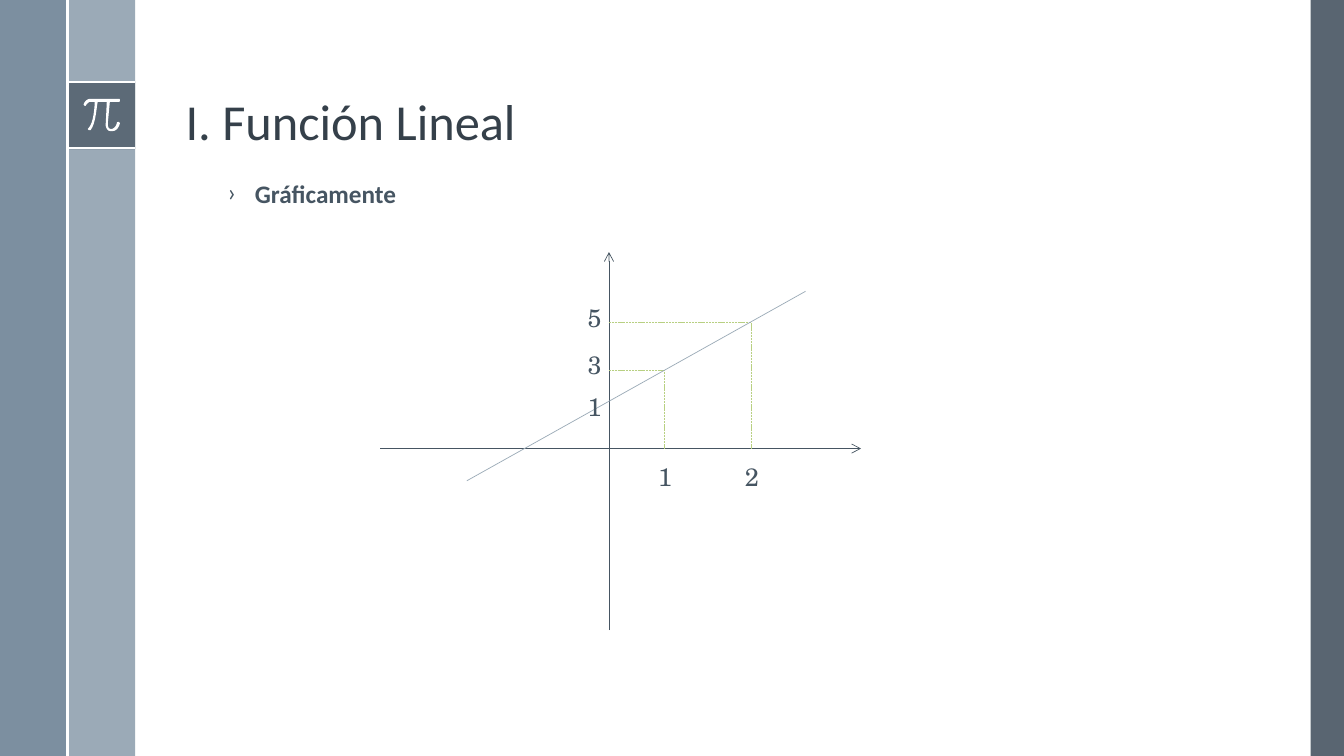
from lxml import etree
from pptx import Presentation
from pptx.dml.color import RGBColor
from pptx.enum import dml, shapes, text
from pptx.oxml.ns import qn
from pptx.util import Inches, Pt

# Content
TITLE = "I. Función Lineal"
SUBTITLE = "Gráficamente"
ORIGIN = (6.04, 4.45)
AXES = [((6.04, 6.25), (6.04, 2.5)), ((3.77, 4.45), (8.54, 4.45))]
FUNCTION_LINE = ((7.99, 2.89), (4.63, 4.77))
MARKED_POINTS = [(6.59, 3.67), (7.45, 3.2)]
AXIS_LABELS = [  # text, left, top, width
    ("1", 6.43, 4.53, 0.39), ("2", 7.29, 4.53, 0.47),
    ("3", 5.73, 3.42, 0.23), ("5", 5.73, 2.95, 0.23), ("1", 5.73, 3.83, 0.39),
]
BANDS = [  # left, top, width, height, colour, opacity %
    (13, 0, 0.33, 7.5, "dark", 90), (0.67, 0, 0.67, 7.5, "light", 100),
    (0, 0, 0.67, 7.5, "mid", 88), (0.67, 0.81, 0.67, 0.67, "dark", 75),
]
BAND_RULES = [((0.67, 0.81), (1.34, 0.81)), ((0.67, 1.47), (1.34, 1.47)),
              ((0.67, 0), (0.67, 7.5))]
# Pi outline: each step is one corner, or two handles and an end point
PI_START = (1.18, 0.98)
PI_STEPS = [
    [(0.9, 0.98)], [(0.85, 0.98), (0.83, 1.03), (0.83, 1.04)],
    [(0.84, 1.05)], [(0.85, 1.05)], [(0.85, 1.05), (0.87, 1.01), (0.9, 1.01)],
    [(0.94, 1.01)], [(0.94, 1.05), (0.93, 1.22), (0.88, 1.27)],
    [(0.87, 1.28), (0.87, 1.28), (0.88, 1.29)], [(0.9, 1.29)],
    [(0.95, 1.23), (0.96, 1.05), (0.97, 1.01)], [(1.06, 1.01)], [(1.05, 1.22)],
    [(1.05, 1.22), (1.04, 1.26), (1.07, 1.29)],
    [(1.08, 1.3), (1.09, 1.3), (1.1, 1.3)], [(1.12, 1.3)],
    [(1.17, 1.3), (1.19, 1.23), (1.19, 1.22)], [(1.18, 1.21)],
    [(1.17, 1.21), (1.16, 1.21), (1.16, 1.22)],
    [(1.16, 1.22), (1.15, 1.27), (1.11, 1.28)],
    [(1.1, 1.28), (1.09, 1.28), (1.08, 1.27)],
    [(1.07, 1.26), (1.07, 1.23), (1.07, 1.22)], [(1.09, 1.01)], [(1.18, 1.01)],
    [(1.19, 1.01), (1.19, 1.0), (1.19, 1.0)],
    [(1.19, 0.99), (1.19, 0.98), (1.18, 0.98)],
]

THEME = {
    "dark": "475562", "light": "9BAAB7", "mid": "6A8093", "white": "FFFFFF",
    "title": "35404A", "text": "465562", "guide": "B8D082",
    "sans": "Calibri", "serif": "TeX Gyre Schola",
    "title_size": 36, "text_size": 18, "thin": 0.5, "rule": 1.5,
}


def colour(name):
    return RGBColor.from_string(THEME[name])


def fill_plain(shape, name, opacity=100):
    shape.shadow.inherit = False
    shape.fill.solid()
    shape.fill.fore_color.rgb = colour(name)
    shape.line.fill.background()
    if opacity < 100:
        tint = shape.fill._xPr.find(qn("a:solidFill"))[0]
        etree.SubElement(tint, qn("a:alpha"), val=str(opacity * 1000))


def draw_line(slide, start, end, name, width="thin", dash=None, arrow=False):
    line = slide.shapes.add_connector(
        shapes.MSO_CONNECTOR.STRAIGHT, *map(Inches, start + end))
    line.line.color.rgb = colour(name)
    line.line.width = Pt(THEME[width])
    if dash:
        line.line.dash_style = dash
    if arrow:
        etree.SubElement(line.line._get_or_add_ln(), qn("a:tailEnd"), type="arrow")
    etree.SubElement(line._element.spPr, qn("a:effectLst"))


def write(frame, words, font, size, name, **paragraph_format):
    frame.word_wrap = True
    paragraph = frame.paragraphs[0]
    for key, value in paragraph_format.items():
        setattr(paragraph, key, value)
    run = paragraph.add_run()
    run.text = words
    for key, value in {"name": THEME[font], "size": Pt(THEME[size])}.items():
        setattr(run.font, key, value)
    run.font.color.rgb = colour(name)
    return paragraph


def curve(start, step, pieces=8):
    if len(step) == 1:
        return step
    corners = [start] + step
    return [tuple(sum(w * c[axis] for w, c in zip(weights, corners)) for axis in (0, 1))
            for t in (i / pieces for i in range(1, pieces + 1))
            for weights in [((1 - t) ** 3, 3 * t * (1 - t) ** 2,
                             3 * t * t * (1 - t), t ** 3)]]


def draw_frame(slide):
    for left, top, width, height, name, opacity in BANDS:
        band = slide.shapes.add_shape(
            shapes.MSO_SHAPE.RECTANGLE, *map(Inches, (left, top, width, height)))
        fill_plain(band, name, opacity)
    for start, end in BAND_RULES:
        draw_line(slide, start, end, "white", "rule")
    outline, last = [], PI_START
    for step in PI_STEPS:
        outline += curve(last, step)
        last = step[-1]
    builder = slide.shapes.build_freeform(*map(Inches, PI_START))
    builder.add_line_segments([tuple(map(Inches, point)) for point in outline])
    fill_plain(builder.convert_to_shape(), "white")


def draw_headings(slide):
    title = slide.shapes.title
    box = {"left": 1.74, "top": 0.19, "width": 10.7, "height": 1.36}
    for key, value in box.items():
        setattr(title, key, Inches(value))
    title.text_frame.vertical_anchor = text.MSO_ANCHOR.BOTTOM
    write(title.text_frame, TITLE, "sans", "title_size", "title",
          alignment=text.PP_ALIGN.LEFT, line_spacing=0.9)

    body = slide.shapes.add_textbox(*map(Inches, (2.16, 1.75, 8.17, 5.33)))
    item = write(body.text_frame, SUBTITLE, "sans", "text_size", "text",
                 line_spacing=0.9, space_before=Pt(14))
    item.runs[0].font.bold = True
    props = item._p.get_or_add_pPr()
    props.set("marL", str(Inches(0.27)))
    props.set("indent", str(Inches(-0.27)))
    etree.SubElement(props, qn("a:buFont"), typeface=THEME["sans"])
    etree.SubElement(props, qn("a:buChar"), char="›")


def draw_graph(slide):
    for start, end in AXES:
        draw_line(slide, start, end, "text", arrow=True)
    # Guides from each marked point to both axes
    for x, y in MARKED_POINTS:
        for foot in ((ORIGIN[0], y), (x, ORIGIN[1])):
            draw_line(slide, foot, (x, y), "guide", dash=dml.MSO_LINE.SQUARE_DOT)
    draw_line(slide, *FUNCTION_LINE, "light")
    for words, left, top, width in AXIS_LABELS:
        label = slide.shapes.add_textbox(*map(Inches, (left, top, width, 0.4)))
        write(label.text_frame, words, "serif", "text_size", "text")


def main():
    deck = Presentation()
    deck.slide_width, deck.slide_height = Inches(13.33), Inches(7.5)
    slide = deck.slides.add_slide(deck.slide_layouts[5])
    draw_frame(slide)
    draw_headings(slide)
    draw_graph(slide)
    deck.save("out.pptx")


if __name__ == "__main__":
    main()
